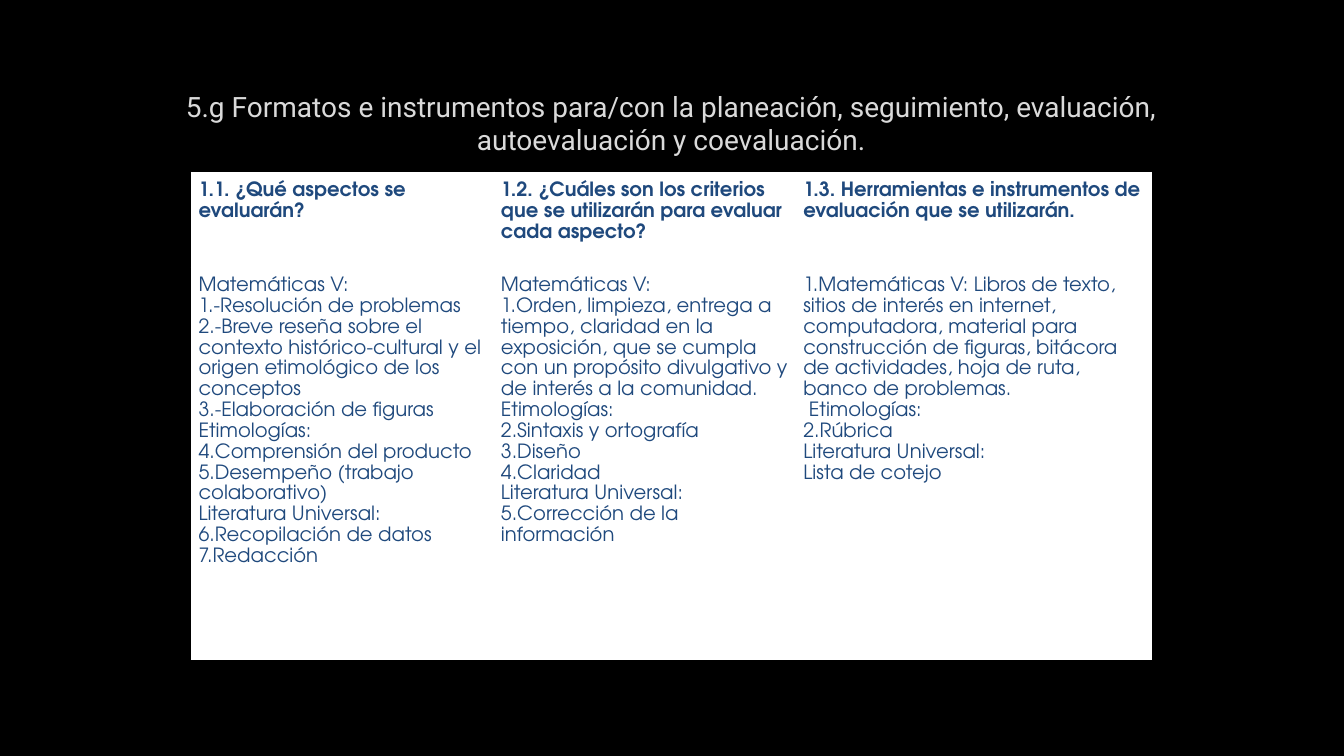
from pptx import Presentation
from pptx import util as u
from pptx.dml.color import RGBColor
from pptx.enum import text
from pptx.oxml.ns import qn
from lxml import etree

Pt = u.Pt
COLORS = {"back": "000000", "title": "DADADA", "ink": "1F497D", "paper": "FFFFFF"}

HEADINGS = [
    "1. ¿Qué aspectos se evaluarán?",
    "2. ¿Cuáles son los criterios que se utilizarán para evaluar cada aspecto?",
    "3. Herramientas e instrumentos de evaluación que se utilizarán.",
]
SUBJECTS = [
    [
        ("Matemáticas V:", [
            "-Resolución de problemas",
            "-Breve reseña sobre el contexto histórico-cultural y el origen "
            "etimológico de los conceptos",
            "-Elaboración de figuras"]),
        ("Etimologías:", ["Comprensión del producto", "Desempeño (trabajo colaborativo)"]),
        ("Literatura Universal:", ["Recopilación de datos", "Redacción"]),
    ],
    [
        ("Matemáticas V:", [
            "Orden, limpieza, entrega a tiempo, claridad en la exposición, que se "
            "cumpla con un propósito divulgativo y de interés a la comunidad."]),
        ("Etimologías:", ["Sintaxis y ortografía", "Diseño", "Claridad"]),
        ("Literatura Universal:", ["Corrección de la información"]),
    ],
    [
        (None, [
            "Matemáticas V: Libros de texto, sitios de interés en internet, "
            "computadora, material para construcción de figuras, bitácora de "
            "actividades, hoja de ruta, banco de problemas."]),
        ("Etimologías:", ["Rúbrica"]),
        ("Literatura Universal:", []),
        ("Lista de cotejo", []),
    ],
]


def rgb(name):
    return RGBColor.from_string(COLORS[name])


def add_text(tf, content, font, size, color, bold=False, align=None,
             spacing=None, number=None, left=0):
    p = tf.paragraphs[0]
    if p.runs:
        p = tf.add_paragraph()
    p.alignment = align
    p.line_spacing = spacing
    r = p.add_run()
    r.text = content
    r.font.name = font
    r.font.size = Pt(size)
    r.font.bold = bold
    r.font.color.rgb = rgb(color)
    pPr = p._p.get_or_add_pPr()
    pPr.set("marL", str(Pt(left)))
    if number:
        pPr.set("indent", str(-Pt(27)))
        etree.SubElement(pPr, qn("a:buFont"), typeface="+mj-lt")
        etree.SubElement(pPr, qn("a:buAutoNum"), type="arabicPeriod", startAt=str(number))
    else:
        pPr.set("indent", "0")
        etree.SubElement(pPr, qn("a:buNone"))


def add_title(s, x, y, w, h):
    tf = s.shapes.add_textbox(Pt(x), Pt(y), Pt(w), Pt(h)).text_frame
    tf.word_wrap = True
    tf.vertical_anchor = text.MSO_ANCHOR.BOTTOM
    add_text(tf, "5.g Formatos e instrumentos para/con la planeación, seguimiento, "
             "evaluación, autoevaluación y coevaluación.",
             font="Roboto", size=20, color="title", align=text.PP_ALIGN.CENTER)


def style_cell(cell):
    cell.margin_left = cell.margin_right = Pt(5)
    cell.margin_top = cell.margin_bottom = Pt(5)
    tcPr = cell._tc.get_or_add_tcPr()
    for side in ("lnL", "lnR", "lnT", "lnB"):
        ln = etree.SubElement(tcPr, qn(f"a:{side}"), w=str(Pt(1)))
        fill = etree.SubElement(ln, qn("a:solidFill"))
        etree.SubElement(fill, qn("a:srgbClr"), val=COLORS["paper"])
    cell.fill.solid()
    cell.fill.fore_color.rgb = rgb("paper")


def fill_subjects(tf, subjects, body):
    number = 1
    for i, (subject, items) in enumerate(subjects):
        if subject:
            indented = subjects[0][0] is None and i == 1
            add_text(tf, subject, left=4 if indented else 0, **body)
        for item in items:
            add_text(tf, item, number=number, **body)
        number += len(items)


def add_evaluation_table(s, x, y, w, h):
    table = s.shapes.add_table(2, 3, Pt(x), Pt(y), Pt(w), Pt(h)).table
    table.first_row = table.horz_banding = False
    narrow, head = 216, 52.6
    for col, width in zip(table.columns, (narrow, narrow, w - 2 * narrow)):
        col.width = Pt(width)
    for row, height in zip(table.rows, (head, h - head)):
        row.height = Pt(height)
    body = dict(font="TeX Gyre Adventor", size=14, color="ink", spacing=1.15)
    for c, (heading, subjects) in enumerate(zip(HEADINGS, SUBJECTS)):
        for r in range(2):
            style_cell(table.cell(r, c))
        add_text(table.cell(0, c).text_frame, heading, bold=True, number=1, **body)
        fill_subjects(table.cell(1, c).text_frame, subjects, body)


def main():
    prs = Presentation()
    prs.slide_width, prs.slide_height = Pt(960), Pt(540)
    s = prs.slides.add_slide(prs.slide_layouts[6])
    s.background.fill.solid()
    s.background.fill.fore_color.rgb = rgb("back")
    add_title(s, 108, 47.5, 743, 67.7)
    add_evaluation_table(s, 136.8, 123.1, 685.4, 321.1)
    prs.save("out.pptx")


if __name__ == "__main__":
    main()
